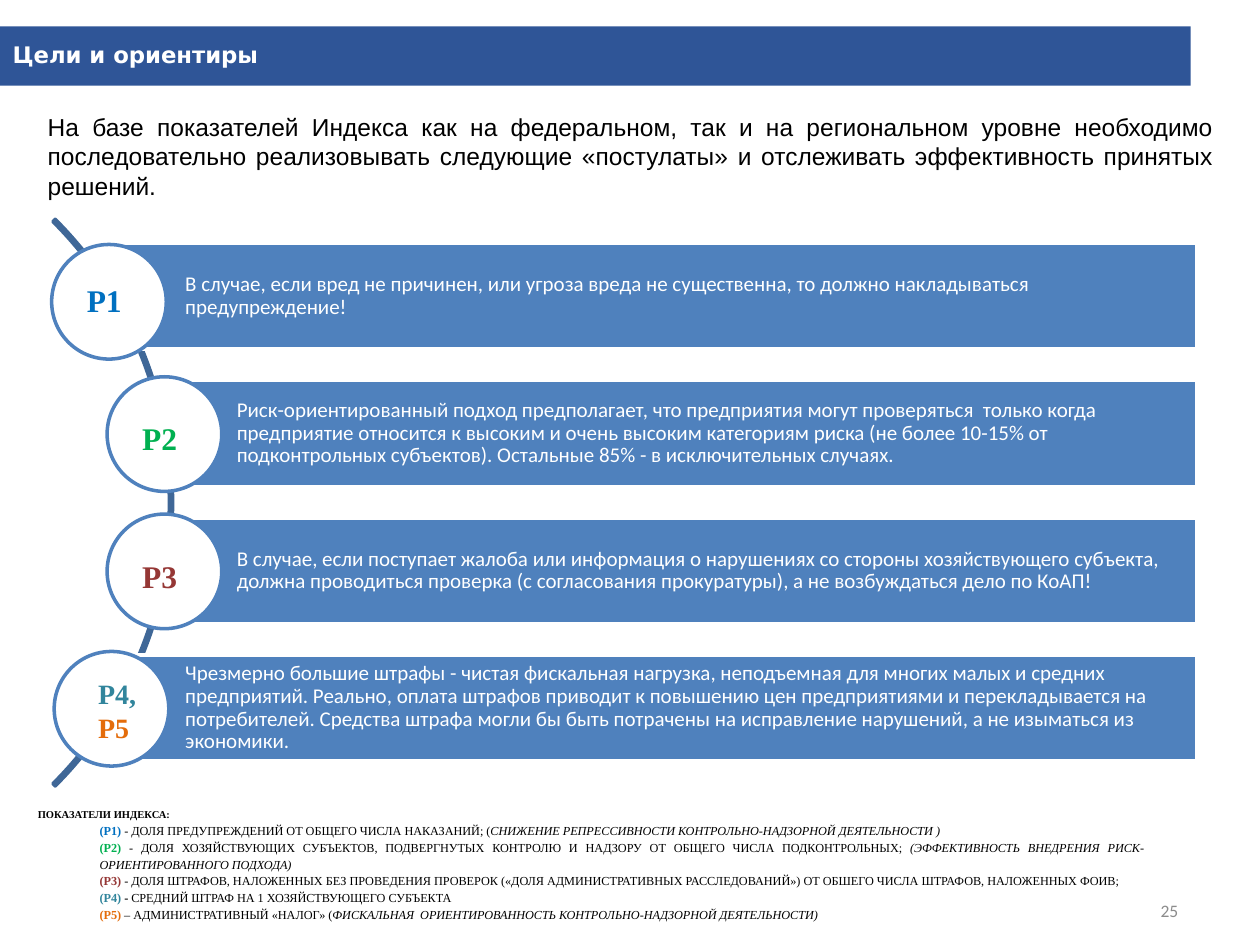
from lxml import etree
from pptx import Presentation
from pptx.dml.color import RGBColor
from pptx.enum.shapes import MSO_SHAPE
from pptx.enum.text import MSO_ANCHOR, MSO_AUTO_SIZE, PP_ALIGN
from pptx.oxml.ns import qn
from pptx.util import Inches, Pt

RECT, OVAL, ARC = MSO_SHAPE.RECTANGLE, MSO_SHAPE.OVAL, MSO_SHAPE.BLOCK_ARC
TOP, MIDDLE = MSO_ANCHOR.TOP, MSO_ANCHOR.MIDDLE
LEFT, RIGHT, JUSTIFY = PP_ALIGN.LEFT, PP_ALIGN.RIGHT, PP_ALIGN.JUSTIFY
COLS, ROWS = 100, 75

COLORS = {
    "header": "2F5597", "bar": "4F81BD", "arc": "3F6797",
    "white": "FFFFFF", "black": "000000", "grey": "8C8C8C",
    "P1": "0070C0", "P2": "00B050", "P3": "953735",
    "P4": "31859C", "P5": "E46C0A",
}


class Deck:
    """Style and current slide; boxes are (column, row, columns, rows)."""

    def __init__(self):
        self.prs = Presentation()
        self.prs.slide_width, self.prs.slide_height = Inches(10), Inches(7.5)
        self.col = self.prs.slide_width / COLS
        self.row = self.prs.slide_height / ROWS
        self.slide = self.prs.slides.add_slide(self.prs.slide_layouts[1])

    def color(self, name):
        return RGBColor.from_string(COLORS[name])

    def box(self, x, y, w, h):
        return (round(x * self.col), round(y * self.row),
                round(w * self.col), round(h * self.row))

    def shape(self, kind, box, fill=None, line=None):
        sp = self.slide.shapes.add_shape(kind, *self.box(*box))
        sp.shadow.inherit = False
        if fill:
            sp.fill.solid()
            sp.fill.fore_color.rgb = self.color(fill)
        else:
            sp.fill.background()
        if line:
            sp.line.color.rgb = self.color(line)
            sp.line.width = Pt(2)
        else:
            sp.line.fill.background()
        return sp

    def frame(self, sp, anchor=TOP, insets=None):
        tf = sp.text_frame
        tf.word_wrap = True
        tf.auto_size = MSO_AUTO_SIZE.NONE
        tf.vertical_anchor = anchor
        if insets:
            (tf.margin_left, tf.margin_top,
             tf.margin_right, tf.margin_bottom) = map(Inches, insets)
        return tf

    def add_runs(self, tf, paragraphs, font, size, align=LEFT, spacing=1.0):
        """Each paragraph is a list of runs: (text, color, style letters)."""
        for i, runs in enumerate(paragraphs):
            p = tf.add_paragraph() if i else tf.paragraphs[0]
            p.alignment, p.line_spacing = align, spacing
            for text, color, style in runs:
                r = p.add_run()
                r.text = text
                r.font.name, r.font.size = font, Pt(size)
                r.font.bold, r.font.italic = "b" in style, "i" in style
                r.font.color.rgb = self.color(color)

    def text(self, box, paragraphs, font, size, align=LEFT, anchor=TOP):
        sp = self.slide.shapes.add_textbox(*self.box(*box))
        self.add_runs(self.frame(sp, anchor), paragraphs, font, size, align)

    def placeholder(self, sp, box, paragraphs, font, size, anchor=TOP,
                    align=LEFT, spacing=1.0):
        sp.left, sp.top, sp.width, sp.height = self.box(*box)
        tf = self.frame(sp, anchor)
        self.add_runs(tf, paragraphs, font, size, align, spacing)
        return tf

    def title(self, box, text):
        bar = self.shape(RECT, (0, 2.1, 94.5, 4.7), "header")
        self.slide.shapes._spTree.insert(2, bar._element)  # behind the title
        self.placeholder(self.slide.shapes.title, box,
                         [[(text, "white", "b")]], "DejaVu Sans", 13, MIDDLE)

    def index_list(self, box, paragraphs):
        tf = self.placeholder(self.slide.placeholders[1], box, paragraphs,
                              "Times New Roman", 7, TOP, JUSTIFY, 1.15)
        for i, p in enumerate(tf.paragraphs):
            p.space_before = Pt(0)
            pPr = p._p.get_or_add_pPr()
            pPr.set("marL", str(Inches(0.49) if i else 0))
            pPr.set("indent", "0")
            etree.SubElement(pPr, qn("a:buNone"))
        tf.paragraphs[0].runs[0].font.size = Pt(6)

    def arc(self, box):
        sp = self.shape(ARC, box, line="arc")
        for i, value in enumerate((189, 27, 0.004)):  # 315° to 45°, thin
            sp.adjustments[i] = value

    def postulate(self, top, text, x, circle, label, labels, size):
        bar = self.shape(RECT, (x, top, 95 - x, 8.4), "bar", "white")
        tf = self.frame(bar, MIDDLE, (0.58, 0.03, 0.03, 0.03))
        self.add_runs(tf, [[(text, "white", "")]], "Calibri", 12, spacing=0.9)
        self.shape(OVAL, (circle[0], top + circle[1], 9.1, 9.1),
                   "white", "bar")
        self.text((label[0], top + label[1], label[2], label[3]),
                  [[(name, name[:2], "b")] for name in labels],
                  "Times New Roman", size)


# Text, bar column, circle offset, label box, labels, label size
POSTULATES = [
    ("В случае, если вред не причинен, или угроза вреда не существенна, "
     "то должно накладываться предупреждение!",
     8.9, (4.1, 0.1), (5.9, 2.5, 5.5, 4), ["P1"], 18),
    ("Риск-ориентированный подход предполагает, что предприятия могут "
     "проверяться  только когда предприятие относится к высоким и очень "
     "высоким категориям риска (не более 10-15% от подконтрольных "
     "субъектов). Остальные 85% - в исключительных случаях.",
     13, (8.5, -0.3), (10.3, 2.6, 5.5, 4), ["P2"], 18),
    ("В случае, если поступает жалоба или информация о нарушениях со "
     "стороны хозяйствующего субъекта, должна проводиться проверка "
     "(с согласования прокуратуры), а не возбуждаться дело по КоАП!",
     13, (8.5, -0.3), (10.3, 2.6, 5.5, 4), ["P3"], 18),
    ("Чрезмерно большие штрафы - чистая фискальная нагрузка, неподъемная "
     "для многих малых и средних предприятий. Реально, оплата штрафов "
     "приводит к повышению цен предприятиями и перекладывается на "
     "потребителей. Средства штрафа могли бы быть потрачены на исправление "
     "нарушений, а не изыматься из экономики.",
     8.9, (4.3, -0.3), (6.8, 1.2, 7.8, 6.4), ["P4,", "P5"], 16),
]

INDICATORS = [
    [("ПОКАЗАТЕЛИ ИНДЕКСА:", "black", "b")],
    [("(P1) ", "P1", "b"),
     ("- ДОЛЯ ПРЕДУПРЕЖДЕНИЙ ОТ ОБЩЕГО ЧИСЛА НАКАЗАНИЙ; (", "black", ""),
     ("СНИЖЕНИЕ РЕПРЕССИВНОСТИ КОНТРОЛЬНО-НАДЗОРНОЙ ДЕЯТЕЛЬНОСТИ )",
      "black", "i")],
    [("(P2)", "P2", "b"),
     (" - ДОЛЯ ХОЗЯЙСТВУЮЩИХ СУБЪЕКТОВ, ПОДВЕРГНУТЫХ КОНТРОЛЮ И НАДЗОРУ "
      "ОТ ОБЩЕГО ЧИСЛА ПОДКОНТРОЛЬНЫХ; ", "black", ""),
     ("(ЭФФЕКТИВНОСТЬ ВНЕДРЕНИЯ РИСК-ОРИЕНТИРОВАННОГО ПОДХОДА)",
      "black", "i")],
    [("(P3) ", "P3", "b"),
     ("- ДОЛЯ ШТРАФОВ, НАЛОЖЕННЫХ БЕЗ ПРОВЕДЕНИЯ ПРОВЕРОК («ДОЛЯ "
      "АДМИНИСТРАТИВНЫХ РАССЛЕДОВАНИЙ») ОТ ОБШЕГО ЧИСЛА ШТРАФОВ, "
      "НАЛОЖЕННЫХ ФОИВ;", "black", "")],
    [("(P4) ", "P4", "b"), ("- ", "black", "b"),
     ("СРЕДНИЙ ШТРАФ НА 1 ХОЗЯЙСТВУЮЩЕГО СУБЪЕКТА", "black", "")],
    [("(P5)", "P5", "b"),
     (" – АДМИНИСТРАТИВНЫЙ «НАЛОГ» (", "black", ""),
     ("ФИСКАЛЬНАЯ  ОРИЕНТИРОВАННОСТЬ КОНТРОЛЬНО-НАДЗОРНОЙ ДЕЯТЕЛЬНОСТИ)",
      "black", "i")],
]

INTRO = ("На базе показателей Индекса как на федеральном, так и на "
         "региональном уровне необходимо последовательно реализовывать "
         "следующие «постулаты» и отслеживать эффективность принятых решений.")


def main():
    deck = Deck()

    # Header and introduction
    deck.title((0, 2.6, 86.2, 3.4), "Цели и ориентиры")
    deck.text((2.8, 8.4, 94.5, 8.1), [[(INTRO, "black", "")]],
              "Arial", 14, JUSTIFY)

    # Postulates along the arc
    deck.arc((-49.9, 8.1, 63.6, 63.6))
    for i, postulate in enumerate(POSTULATES):
        deck.postulate(19.3 + 10.9 * i, *postulate)

    # Index indicators and slide number
    deck.index_list((2, 63.5, 89.8, 10.2), INDICATORS)
    deck.text((85.8, 69.5, 8.7, 5.5), [[("25", "grey", "")]],
              "Calibri", 10, RIGHT, MIDDLE)

    deck.prs.save("out.pptx")


if __name__ == "__main__":
    main()
